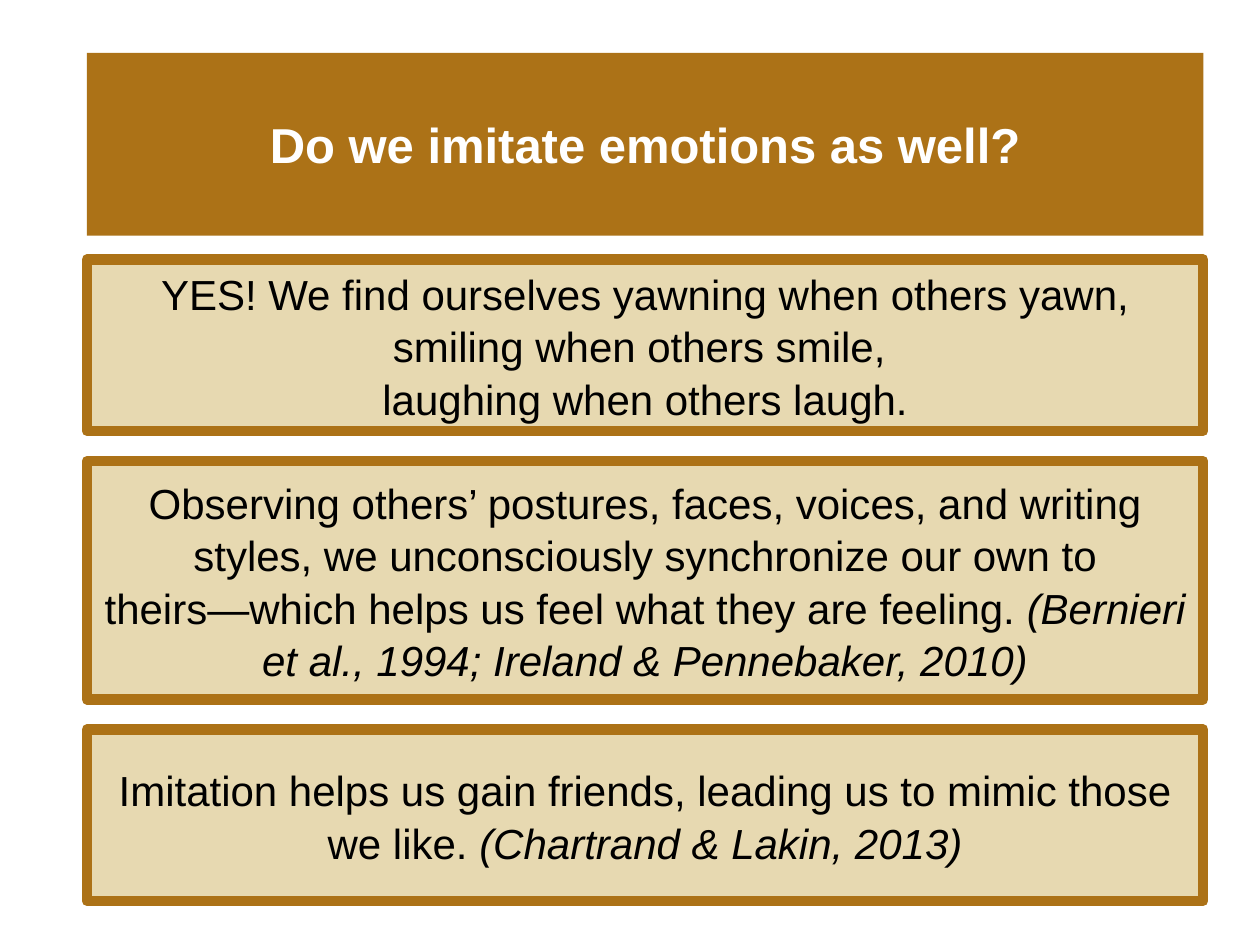
from dataclasses import dataclass

from pptx import Presentation
from pptx import util as u
from pptx.dml.color import RGBColor
from pptx.enum import shapes, text


@dataclass(frozen=True)
class Theme:
    font: str = "Arial"
    accent: str = "AC7217"
    panel: str = "E7D9B1"
    ink: str = "000000"
    light: str = "FFFFFF"
    title_size: int = 28
    body_size: int = 24
    border: int = 6
    leading: float = 1.04


class Deck:
    LEFT, WIDTH = 0.69, 8.86

    def __init__(self, theme):
        self.theme = theme
        self.prs = Presentation()
        self.prs.slide_width, self.prs.slide_height = u.Inches(10), u.Inches(7.5)
        self.s = self.prs.slides.add_slide(self.prs.slide_layouts[5])

    def box(self, top, height):
        return [u.Inches(v) for v in (self.LEFT, top, self.WIDTH, height)]

    def fill(self, sp, color):
        sp.fill.solid()
        sp.fill.fore_color.rgb = RGBColor.from_string(color)

    def set_text(self, sp, paragraphs, size, color, bold=False, leading=1.0):
        tf = sp.text_frame
        frame = {"word_wrap": True, "auto_size": text.MSO_AUTO_SIZE.NONE,
                 "vertical_anchor": text.MSO_ANCHOR.MIDDLE}
        for name, value in frame.items():
            setattr(tf, name, value)
        for i, runs in enumerate(paragraphs):
            p = tf.add_paragraph() if i else tf.paragraphs[0]
            p.alignment = text.PP_ALIGN.CENTER
            p.line_spacing = leading
            for words, italic in runs:
                r = p.add_run()
                r.text = words
                style = {"name": self.theme.font, "size": u.Pt(size),
                         "bold": bold, "italic": italic}
                for name, value in style.items():
                    setattr(r.font, name, value)
                r.font.color.rgb = RGBColor.from_string(color)

    def title(self, words, top, height):
        t = self.theme
        sp = self.s.shapes.title
        sp.left, sp.top, sp.width, sp.height = self.box(top, height)
        self.fill(sp, t.accent)
        self.set_text(sp, [[(words, False)]], t.title_size, t.light, bold=True)

    def panel(self, paragraphs, top, height):
        t = self.theme
        sp = self.s.shapes.add_shape(shapes.MSO_SHAPE.RECTANGLE, *self.box(top, height))
        sp.shadow.inherit = False
        self.fill(sp, t.panel)
        sp.line.color.rgb = RGBColor.from_string(t.accent)
        sp.line.width = u.Pt(t.border)
        self.set_text(sp, paragraphs, t.body_size, t.ink, leading=t.leading)

    def stack(self, panels, top, gap):
        for height, paragraphs in panels:
            self.panel(paragraphs, top, height)
            top += height + gap


PANELS = [
    (1.36, [
        [("YES! We find ourselves yawning when others yawn, smiling when others smile, ", False)],
        [("laughing when others laugh.", False)],
    ]),
    (1.89, [
        [("Observing others’ postures, faces, voices, and writing styles, "
          "we unconsciously synchronize our own to", False)],
        [("theirs—which helps us feel what they are feeling. ", False),
         ("(Bernieri et al., 1994; Ireland & Pennebaker, 2010)", True)],
    ]),
    (1.36, [
        [("Imitation helps us gain friends, leading us to mimic those we like. ", False),
         ("(Chartrand & Lakin, 2013)", True)],
    ]),
]


def main():
    deck = Deck(Theme())
    deck.title("Do we imitate emotions as well?", top=0.42, height=1.45)
    deck.stack(PANELS, top=2.06, gap=0.24)
    deck.prs.save("out.pptx")


if __name__ == "__main__":
    main()
